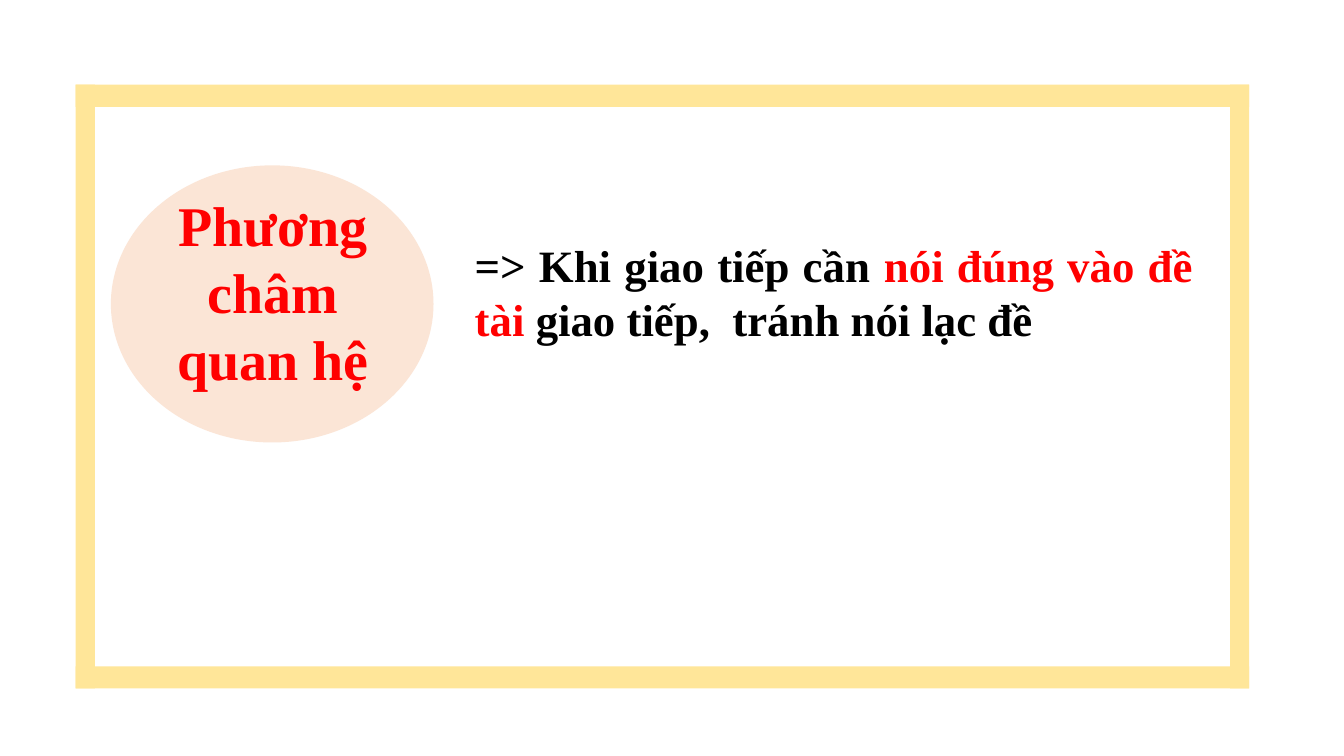
from dataclasses import dataclass

from pptx import Presentation
from pptx.dml.color import RGBColor
from pptx.enum.shapes import MSO_SHAPE
from pptx.enum.text import MSO_AUTO_SIZE, PP_ALIGN
from pptx.util import Inches, Pt


@dataclass(frozen=True)
class Theme:
    font: str = "Times New Roman"
    frame: str = "FFE699"
    badge: str = "FBE5D6"
    ink: str = "000000"
    accent: str = "FF0000"
    title_size: int = 40
    body_size: int = 32


def add_text(paragraph, text, *, font, size, color, bold=True):
    run = paragraph.add_run()
    run.text = text
    run.font.name = font
    run.font.size = Pt(size)
    run.font.bold = bold
    run.font.color.rgb = RGBColor.from_string(color)


class SlideBuilder:
    def __init__(self, slide, theme):
        self.slide = slide
        self.theme = theme

    def shape(self, kind, left, top, width, height, color):
        shape = self.slide.shapes.add_shape(
            kind, Inches(left), Inches(top), Inches(width), Inches(height)
        )
        shape.shadow.inherit = False
        shape.fill.solid()
        shape.fill.fore_color.rgb = RGBColor.from_string(color)
        shape.line.fill.background()

    def frame(self, left, top, width, height, side, band):
        bars = [
            (left, top + height - band, width, band),
            (left, top, width, band),
            (left + width - side, top, side, height),
            (left, top, side, height),
        ]
        for bar in bars:
            self.shape(MSO_SHAPE.RECTANGLE, *bar, self.theme.frame)

    def text_box(self, left, top, width, height, pieces, size, alignment):
        box = self.slide.shapes.add_textbox(
            Inches(left), Inches(top), Inches(width), Inches(height)
        )
        text_frame = box.text_frame
        text_frame.word_wrap = True
        text_frame.auto_size = MSO_AUTO_SIZE.SHAPE_TO_FIT_TEXT
        paragraph = text_frame.paragraphs[0]
        paragraph.alignment = alignment
        for text, color in pieces:
            add_text(paragraph, text, font=self.theme.font, size=size, color=color)


def main():
    presentation = Presentation()
    presentation.slide_width = Inches(13.33)
    presentation.slide_height = Inches(7.5)
    theme = Theme()
    slide = presentation.slides.add_slide(presentation.slide_layouts[6])
    builder = SlideBuilder(slide, theme)

    builder.frame(0.75, 0.84, 11.64, 5.99, side=0.19, band=0.22)
    definition = [
        ("=> Khi giao tiếp cần ", theme.ink),
        ("nói đúng vào đề tài ", theme.accent),
        ("giao tiếp,  tránh nói lạc đề", theme.ink),
    ]
    builder.text_box(
        4.61, 2.31, 7.32, 1.18, definition, theme.body_size, PP_ALIGN.JUSTIFY
    )
    builder.shape(MSO_SHAPE.OVAL, 1.1, 1.64, 3.2, 2.75, theme.badge)
    title = [("Phương châm quan hệ", theme.accent)]
    builder.text_box(
        1.29, 1.84, 2.83, 2.12, title, theme.title_size, PP_ALIGN.CENTER
    )
    presentation.save("out.pptx")


if __name__ == "__main__":
    main()
